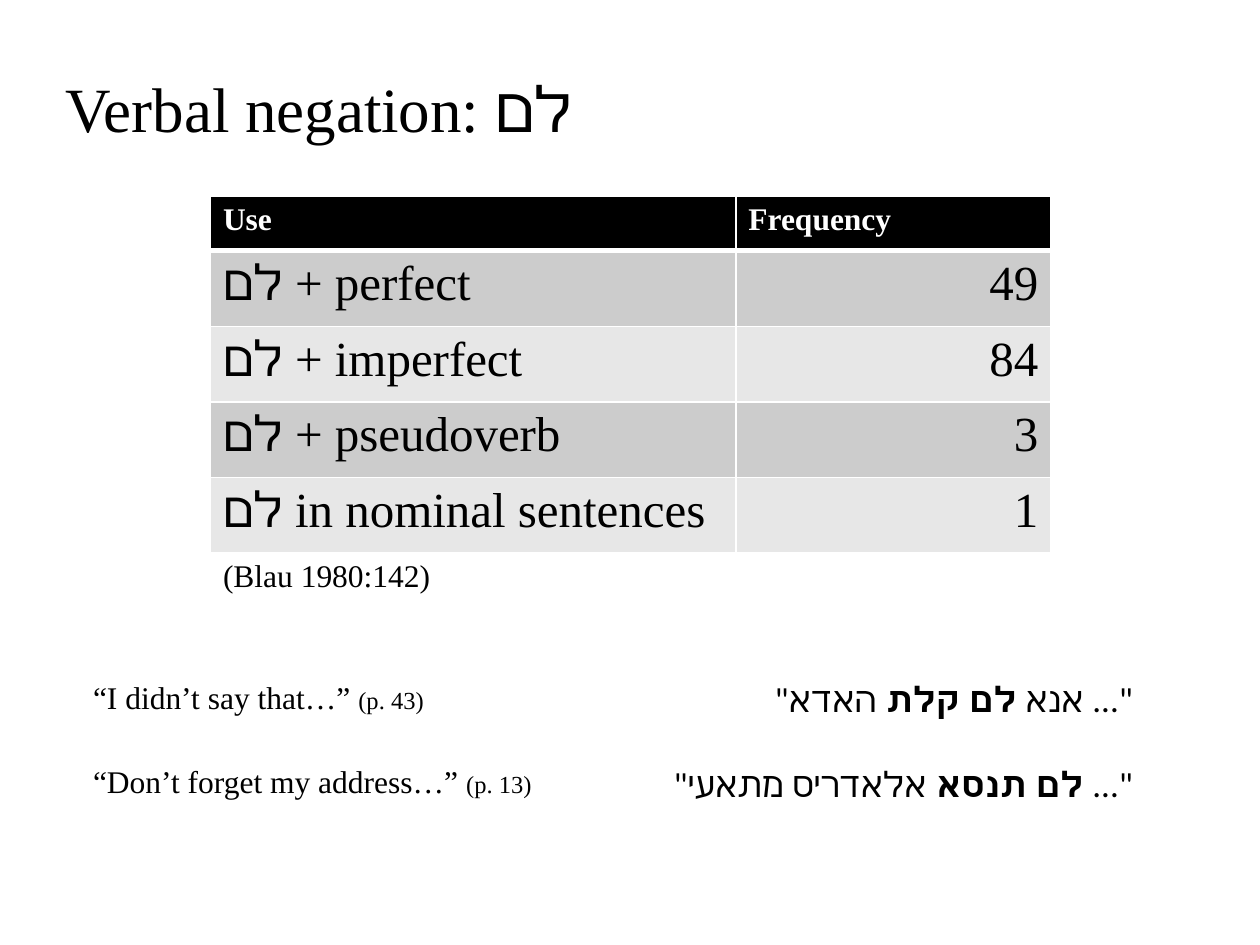
import pptx
import pptx.dml.color
import pptx.enum.text
import pptx.oxml
import pptx.oxml.ns
import pptx.util
from pptx.util import Inches

SERIF, SANS = "Times New Roman", "Calibri"
BLACK, WHITE = "000000", "FFFFFF"
BANDS = ("CCCCCC", "E7E7E7")
LEFT, RIGHT = pptx.enum.text.PP_ALIGN.LEFT, pptx.enum.text.PP_ALIGN.RIGHT

USES = [
    ("לם + perfect", "49"),
    ("לם + imperfect", "84"),
    ("לם + pseudoverb", "3"),
    ("לם in nominal sentences", "1"),
]
# top, Hebrew before, negated verb, Hebrew after, translation, page
EXAMPLES = [
    (5.33, '"אנא ', "לם קלת ", 'האדא ..."', "“I didn’t say that…” ", "(p. 43)"),
    (6, '"', "לם תנסא ", 'אלאדריס מתאעי ..."',
     "“Don’t forget my address…” ", "(p. 13)"),
]


def rgb(color):
    return pptx.dml.color.RGBColor.from_string(color)


def style(font, size, face=SERIF, color=BLACK):
    font.size = pptx.util.Pt(size)
    font.name = face
    font.color.rgb = rgb(color)


def add_text(shapes, box, size, face, align=LEFT):
    """Add an empty text box and return its styled paragraph."""
    frame = shapes.add_textbox(*map(Inches, box)).text_frame
    frame.word_wrap = True
    frame.auto_size = pptx.enum.text.MSO_AUTO_SIZE.SHAPE_TO_FIT_TEXT
    paragraph = frame.paragraphs[0]
    paragraph.alignment = align
    style(paragraph.font, size, face)
    return paragraph


def add_run(paragraph, text):
    run = paragraph.add_run()
    run.text = text
    return run.font


def set_borders(cell, top=1, bottom=1):
    for side, width in (("L", 1), ("R", 1), ("T", top), ("B", bottom)):
        cell._tc.get_or_add_tcPr().append(pptx.oxml.parse_xml(
            f'<a:ln{side} {pptx.oxml.ns.nsdecls("a")} w="{pptx.util.Pt(width)}">'
            f'<a:solidFill><a:srgbClr val="{WHITE}"/></a:solidFill></a:ln{side}>'))


def fill_cell(cell, text, size, color=BLACK, fill=None, align=LEFT, bold=False,
              top=1, bottom=1):
    set_borders(cell, top, bottom)
    if fill:
        cell.fill.solid()
        cell.fill.fore_color.rgb = rgb(fill)
    else:
        cell.fill.background()
    paragraph = cell.text_frame.paragraphs[0]
    paragraph.text = text
    paragraph.alignment = align
    paragraph.font.bold = bold
    style(paragraph.font, size, color=color)


def add_title(slide):
    title = add_text(slide.shapes, (0.42, 0.5, 8.27, 0.71), 36, SERIF)
    add_run(title, "Verbal negation: ")
    add_run(title, "לם").name = SANS


def add_frequencies(slide):
    table = slide.shapes.add_table(
        len(USES) + 2, 2, Inches(1.67), Inches(1.56), Inches(6.67), Inches(3.44)).table
    for column, width in zip(table.columns, (4.17, 2.5)):
        column.width = Inches(width)
    for index, row in enumerate(table.rows):
        row.height = Inches(0.6 if index else 0.43)

    for column, heading in enumerate(("Use", "Frequency")):
        fill_cell(table.cell(0, column), heading, 18, WHITE, BLACK, bold=True, bottom=3)
    for index, use in enumerate(USES):
        for column, (text, align) in enumerate(zip(use, (LEFT, RIGHT))):
            fill_cell(table.cell(index + 1, column), text, 28, fill=BANDS[index % 2],
                      align=align, top=1 if index else 3)
    citation = table.cell(len(USES) + 1, 0)
    citation.merge(table.cell(len(USES) + 1, 1))
    fill_cell(citation, "(Blau 1980:142)", 18)


def add_example(slide, top, before, verb, after, translation, page):
    pair = slide.shapes.add_group_shape().shapes
    hebrew = add_text(pair, (4.67, top, 4.42, 0.44), 20, SANS, RIGHT)
    add_run(hebrew, before)
    add_run(hebrew, verb).bold = True
    add_run(hebrew, after)
    english = add_text(pair, (0.64, top, 4.7, 0.4), 18, SERIF)
    add_run(english, translation)
    add_run(english, page).size = pptx.util.Pt(14)


def main():
    deck = pptx.Presentation()
    deck.slide_width, deck.slide_height = Inches(10), Inches(7.5)
    slide = deck.slides.add_slide(deck.slide_layouts[6])
    add_title(slide)
    add_frequencies(slide)
    for example in reversed(EXAMPLES):
        add_example(slide, *example)
    deck.save("out.pptx")


if __name__ == "__main__":
    main()
